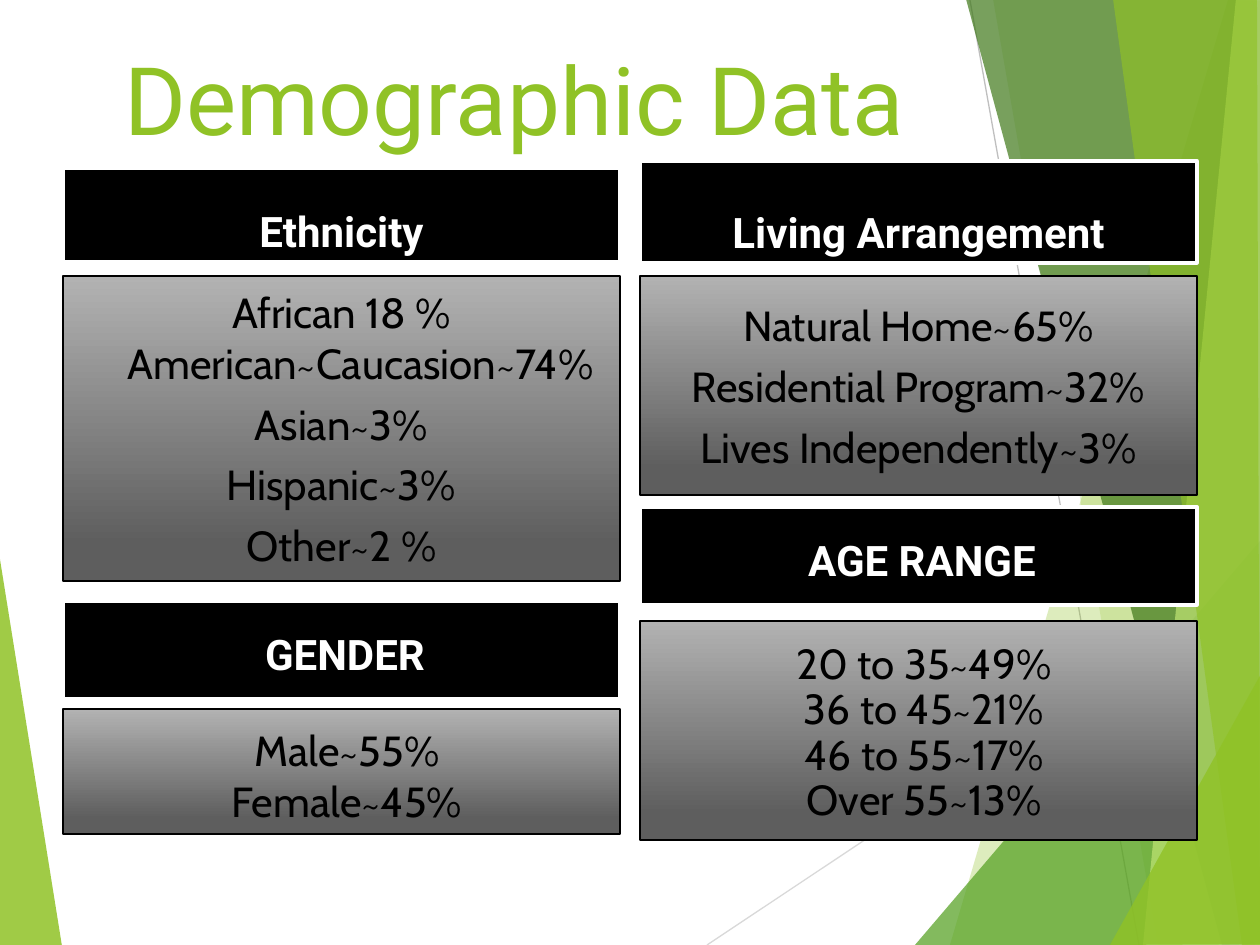
from lxml import etree
from pptx import Presentation
from pptx import util as u
from pptx.dml.color import RGBColor
from pptx.enum import shapes, text
from pptx.oxml.ns import qn

LIME = RGBColor(0x90, 0xC2, 0x26)
PALE_LIME = RGBColor(0xC0, 0xE4, 0x74)
GREEN = RGBColor(0x54, 0xA0, 0x21)
DARK_GREEN = RGBColor(0x3F, 0x78, 0x19)
BLACK = RGBColor(0, 0, 0)
WHITE = RGBColor(0xFF, 0xFF, 0xFF)
LIGHT_GRAY = RGBColor(0xB2, 0xB2, 0xB2)
DARK_GRAY = RGBColor(0x5E, 0x5E, 0x5E)
RULE_GRAY = RGBColor(0xD9, 0xD9, 0xD9)
RULE_MID_GRAY = RGBColor(0xBF, 0xBF, 0xBF)

PX = u.Inches(1) / 126
LEFT, RIGHT, COLUMN_WIDTH = 63, 640, 557
TOP, MIDDLE, BOTTOM = (text.MSO_ANCHOR.TOP, text.MSO_ANCHOR.MIDDLE,
                       text.MSO_ANCHOR.BOTTOM)

# Fill, opacity in percent, corner points
LEFT_FACET = (LIME, 85, [(-1, 553), (62, 946), (-1, 945)])
RIGHT_FACETS = [
    (LIME, 30, [(1228, 0), (950, 945), (1262, 946), (1261, 1)]),
    (LIME, 20, [(993, -1), (1158, 945), (1261, 945), (1261, -1)]),
    (GREEN, 72, [(915, 945), (1260, 541), (1261, 945)]),
    (DARK_GREEN, 70, [(966, -1), (1222, 945), (1261, 944), (1261, -1)]),
    (PALE_LIME, 70, [(1236, -1), (1143, 945), (1261, 945), (1260, -1)]),
    (LIME, 65, [(1113, -1), (1242, 945), (1260, 945), (1257, -1)]),
    (LIME, 80, [(1110, 945), (1261, 674), (1261, 944)]),
]
RULES = [(RULE_GRAY, (707, 945, 1261, 576)),
         (RULE_MID_GRAY, (970, 0, 1139, 945))]

UPPER_HEADER = dict(anchor=BOTTOM, before=10)
LOWER_HEADER = dict(anchor=MIDDLE, insets=(20, 13, 13, 6))
UPPER_LIST = dict(anchor=MIDDLE, before=6, indent=(48, -48))
LOWER_LIST = dict(anchor=MIDDLE, insets=(8, 13, 13, 6), indent=(60, -44))

# Column, top, height, heading, format
HEADERS = [
    (LEFT, 168, 94, "Ethnicity", UPPER_HEADER),
    (RIGHT, 161, 102, "Living Arrangement", UPPER_HEADER),
    (RIGHT, 507, 98, "AGE RANGE", LOWER_HEADER),
    (LEFT, 601, 98, "GENDER", LOWER_HEADER),
]
# Column, top, height, entries, format
LISTS = [
    (LEFT, 276, 305, ["African 18 % American~Caucasion~74% ", "Asian~3%",
                      "Hispanic~3%", "Other~2 %"], UPPER_LIST),
    (RIGHT, 276, 219, ["Natural Home~65%", "Residential Program~32%",
                       "Lives Independently~3%"], UPPER_LIST),
    (RIGHT, 621, 219, ["20 to 35~49%", "36 to 45~21%", "46 to 55~17%",
                       "Over 55~13%"], dict(LOWER_LIST, spacing=0.9)),
    (LEFT, 709, 125, ["Male~55%", "Female~45%"], LOWER_LIST),
]


def emu(*lengths):
    return [round(length * PX) for length in lengths]


def write(box, lines, font="Roboto", size=24, color=WHITE, bold=False,
          align=text.PP_ALIGN.CENTER, anchor=TOP, insets=(13, 6, 13, 6),
          before=0, indent=None, spacing=None):
    frame = box.text_frame
    frame.word_wrap = True
    frame.vertical_anchor = anchor
    (frame.margin_left, frame.margin_top,
     frame.margin_right, frame.margin_bottom) = emu(*insets)
    for number, line in enumerate(lines):
        para = frame.add_paragraph() if number else frame.paragraphs[0]
        para.alignment = align
        para.space_before = u.Pt(before)
        if spacing:
            para.line_spacing = spacing
        if indent:
            margin, first = emu(*indent)
            properties = para._p.get_or_add_pPr()
            properties.set("marL", str(margin))
            properties.set("indent", str(first))
        span = para.add_run()
        span.text = line
        span.font.name, span.font.size = font, u.Pt(size)
        span.font.bold, span.font.color.rgb = bold, color


def add_facet(slide, color, opacity, points):
    builder = slide.shapes.build_freeform(*points[0], scale=PX)
    builder.add_line_segments(points[1:], close=True)
    facet = builder.convert_to_shape()
    facet.shadow.inherit = False
    facet.line.fill.background()
    facet.fill.solid()
    facet.fill.fore_color.rgb = color
    tint = facet._element.spPr.find(qn("a:solidFill"))[0]
    etree.SubElement(tint, qn("a:alpha")).set("val", str(opacity * 1000))


def add_rule(slide, color, ends):
    rule = slide.shapes.add_connector(shapes.MSO_CONNECTOR.STRAIGHT, *emu(*ends))
    rule.line.color.rgb = color
    rule.line.width = u.Pt(0.75)
    etree.SubElement(rule._element.spPr, qn("a:effectLst"))


def add_panel(slide, left, top, height, border, weight):
    panel = slide.shapes.add_shape(shapes.MSO_SHAPE.RECTANGLE,
                                   *emu(left, top, COLUMN_WIDTH, height))
    panel.shadow.inherit = False
    panel.line.color.rgb = border
    panel.line.width = u.Pt(weight)
    return panel


def shade(panel):
    """Fill from light gray at the top to dark gray near the bottom."""
    panel.fill.gradient()
    panel.fill.gradient_angle = 270
    stops = zip(panel.fill.gradient_stops, (0, 0.88), (LIGHT_GRAY, DARK_GRAY))
    for stop, position, color in stops:
        stop.position = position
        stop.color.rgb = color


def main():
    deck = Presentation()
    deck.slide_width, deck.slide_height = emu(1260, 945)
    slide = deck.slides.add_slide(deck.slide_layouts[6])

    add_facet(slide, *LEFT_FACET)
    for rule in RULES:
        add_rule(slide, *rule)
    for facet in RIGHT_FACETS:
        add_facet(slide, *facet)

    title = slide.shapes.add_textbox(*emu(113, 39, 1040, 118))
    write(title, ["Demographic Data"], size=54, color=LIME,
          align=text.PP_ALIGN.LEFT, insets=(11, 2, 11, 6))

    for left, top, height, heading, style in HEADERS:
        panel = add_panel(slide, left, top, height, WHITE, 2)
        panel.fill.solid()
        panel.fill.fore_color.rgb = BLACK
        write(panel, [heading], bold=True, **style)
    for left, top, height, entries, style in LISTS:
        panel = add_panel(slide, left, top, height, BLACK, 1)
        shade(panel)
        write(panel, entries, font="Cabin", color=BLACK, **style)

    deck.save("out.pptx")


if __name__ == "__main__":
    main()
